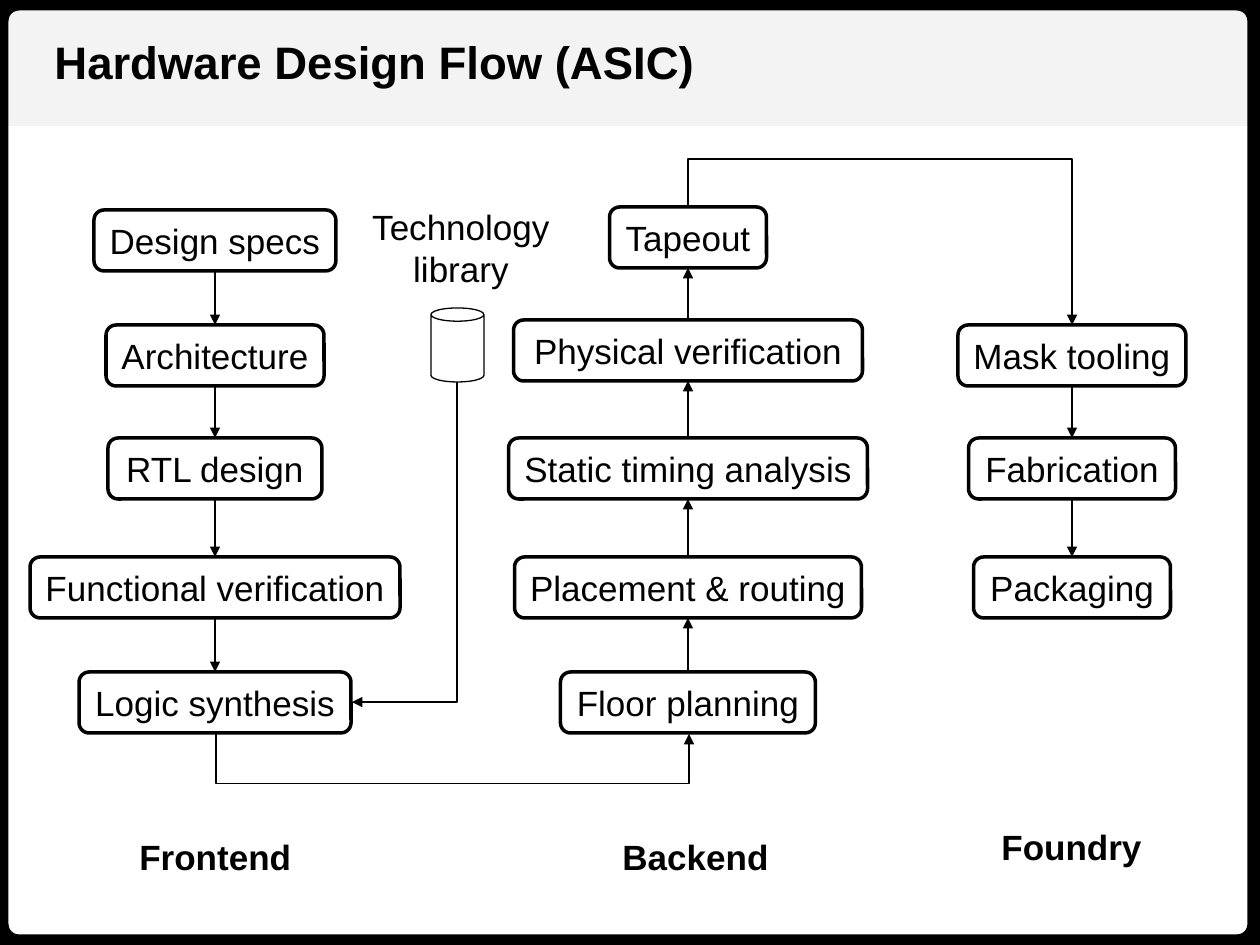
from lxml import etree
from pptx import Presentation
from pptx import util as u
from pptx.dml.color import RGBColor
from pptx.enum import shapes, text
from pptx.oxml.ns import qn

INK = {"black": "000000", "white": "FFFFFF", "band": "F3F3F3"}
KIND = shapes.MSO_SHAPE
BOX_H = 61

# centre x, [(label, top, width)] in the order of the flow
FRONT = (215, [("Design specs", 210, 242), ("Architecture", 325, 218),
               ("RTL design", 438, 214), ("Functional verification", 557, 370),
               ("Logic synthesis", 672, 272)])
BACK = (688, [("Floor planning", 672, 255), ("Placement & routing", 557, 347),
              ("Static timing analysis", 438, 359),
              ("Physical verification", 320, 349), ("Tapeout", 207, 157)])
FOUNDRY = (1072, [("Mask tooling", 325, 228), ("Fabrication", 438, 207),
                  ("Packaging", 557, 197)])


def px(n):
    return u.Emu(round(n * 914400 / 126))


def color(name):
    return RGBColor.from_string(INK[name])


def write(shape, lines, size=20, bold=False, align=text.PP_ALIGN.CENTER):
    frame = shape.text_frame
    frame.word_wrap = False
    for i, line in enumerate(lines):
        para = frame.paragraphs[0] if i == 0 else frame.add_paragraph()
        para.alignment = align
        run = para.add_run()
        run.text = line
        run.font.name = "Arial"
        run.font.size = u.Pt(size)
        run.font.bold = bold
        run.font.color.rgb = color("black")


def label(slide, at, lines, **style):
    write(slide.shapes.add_textbox(*map(px, at)), lines, **style)


def block(slide, kind, at, fill=None, line=0):
    shape = slide.shapes.add_shape(kind, *map(px, at))
    shape.shadow.inherit = False
    if fill:
        shape.fill.solid()
        shape.fill.fore_color.rgb = color(fill)
    else:
        shape.fill.background()
    if line:
        shape.line.color.rgb = color("black")
        shape.line.width = u.Pt(line)
    else:
        shape.line.fill.background()
    return shape


def arrow(slide, start, end, kind=shapes.MSO_CONNECTOR.STRAIGHT):
    link = slide.shapes.add_connector(kind, *map(px, start + end))
    link.line.color.rgb = color("black")
    link.line.width = u.Pt(0.75)
    props = link.element.spPr
    etree.SubElement(props.find(qn("a:ln")), qn("a:tailEnd"), type="triangle")
    etree.SubElement(props, qn("a:effectLst"))
    return props


def elbow(slide, start, end, via=None):
    """Leave start vertically; run across at height via, or at the end's height."""
    (x1, y1), (x2, y2) = start, end
    wide, high = abs(y2 - y1), abs(x2 - x1)
    left, top = (x1 + x2 - wide) / 2, (y1 + y2 - high) / 2
    props = arrow(slide, (left, top), (left + wide, top + high),
                  shapes.MSO_CONNECTOR.ELBOW)
    frame, geom = props.find(qn("a:xfrm")), props.find(qn("a:prstGeom"))
    right = x2 > x1
    frame.set("rot", str((270 if right else 90) * 60000))
    if right:
        frame.set("flipH", "1")
    if via is None:
        geom.set("prst", "bentConnector2")
    else:
        bend = round((via - y1) / (y2 - y1) * 100000)
        etree.SubElement(geom.find(qn("a:avLst")), qn("a:gd"),
                         name="adj1", fmla=f"val {bend}")


def column(slide, mid, steps):
    for name, top, wide in steps:
        at = (mid - wide / 2, top, wide, BOX_H)
        write(block(slide, KIND.ROUNDED_RECTANGLE, at, "white", 2), [name])
    for (_, top, _), (_, after, _) in zip(steps, steps[1:]):
        if after > top:
            arrow(slide, (mid, top + BOX_H), (mid, after))
        else:
            arrow(slide, (mid, top), (mid, after + BOX_H))


def library(slide):
    block(slide, KIND.CAN, (431, 308, 53, 74), line=0.75)
    label(slide, (359, 199, 204, 97), ["Technology", "library"])
    elbow(slide, (457, 382), (352, 702))


def main():
    deck = Presentation()
    deck.slide_width, deck.slide_height = px(1260), px(945)
    slide = deck.slides.add_slide(deck.slide_layouts[6])

    block(slide, KIND.RECTANGLE, (0, 0, 1260, 126), "band")
    border = block(slide, KIND.ROUNDED_RECTANGLE, (-2, 0, 1260, 945), line=12)
    border.adjustments[0] = 0.022
    label(slide, (42, 28, 672, 68), ["Hardware Design Flow (ASIC)"],
          size=26, bold=True, align=text.PP_ALIGN.LEFT)

    for mid, steps in (FRONT, BACK, FOUNDRY):
        column(slide, mid, steps)
    elbow(slide, (216, 733), (689, 734), via=784)
    elbow(slide, (688, 207), (1072, 325), via=159)
    library(slide)

    for name, left, top, wide in (("Frontend", 127, 829, 179),
                                  ("Backend", 610, 829, 173),
                                  ("Foundry", 989, 819, 168)):
        label(slide, (left, top, wide, 55), [name], bold=True,
              align=text.PP_ALIGN.LEFT)
    deck.save("out.pptx")


if __name__ == "__main__":
    main()
